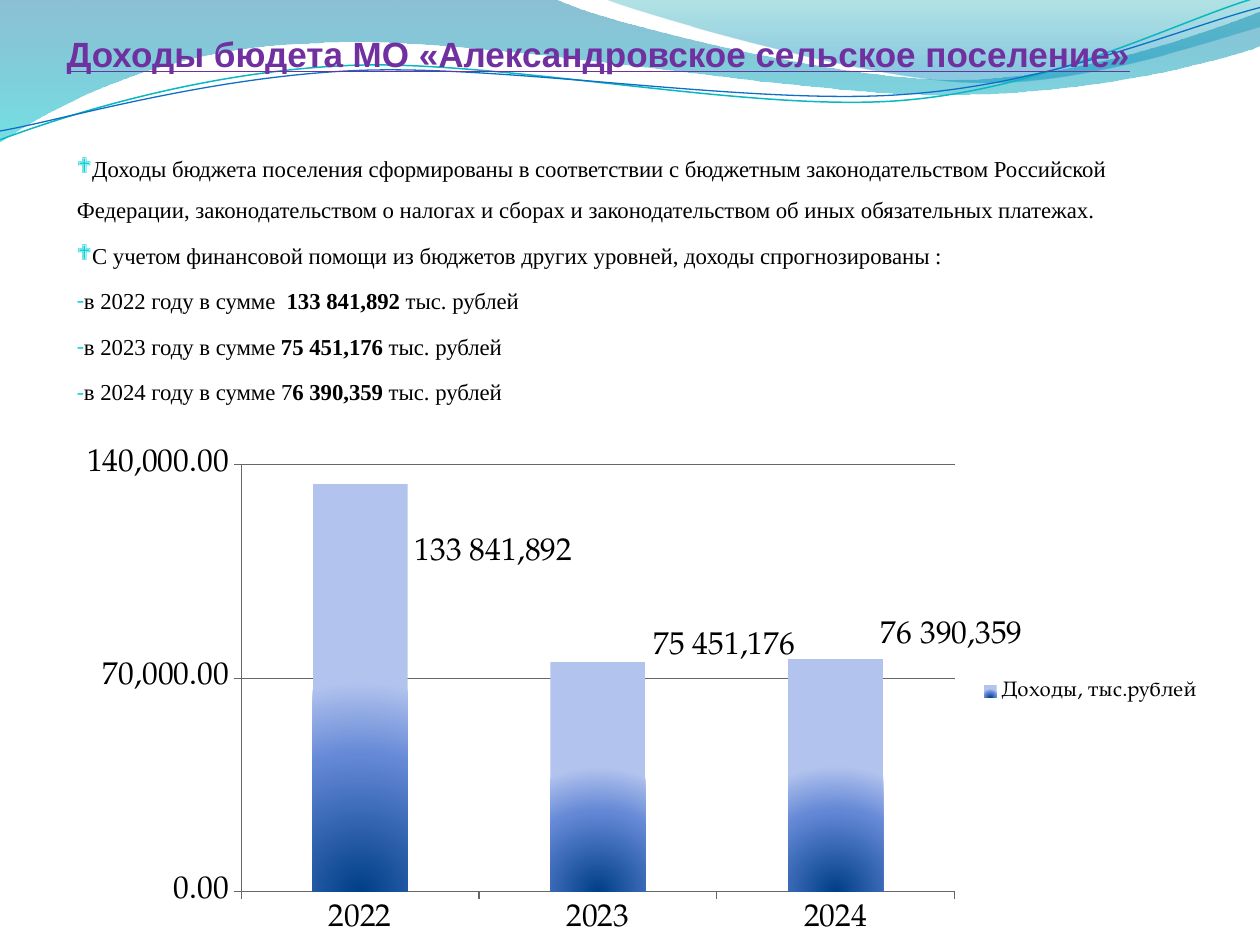
import pptx
import pptx.chart.data
import pptx.dml.color
import pptx.enum.chart
import pptx.enum.text
import pptx.oxml
import pptx.oxml.ns
import pptx.util

COLORS = {
    "title": "7030A0", "text": "000000", "bullet": "0BD0D9", "axis": "666666",
    "teal_line": "0AB8BF", "blue_line": "0F6FC6",
    "wave_top": "0074A1", "wave_bottom": "00C6CF",
    "crest_top": "00A1A9", "crest_bottom": "008BBF",
    "bar_core": "003F88", "bar_middle": "6488D6", "bar_edge": "B2C3EE",
}
A_NS = 'xmlns:a="http://schemas.openxmlformats.org/drawingml/2006/main"'
C_NS = 'xmlns:c="http://schemas.openxmlformats.org/drawingml/2006/chart"'
C15_NS = 'xmlns:c15="http://schemas.microsoft.com/office/drawing/2012/chart"'
GRID = 1000  # wave coordinates: a thousand units across the slide

# Each outline is a start point and segments: two numbers a line, six a curve.
WAVE = [(0, 0), (440, -1), (476, 17, 664, 63, 758, 63),
        (853, 63, 958, 26, 1000, 9), (1001, 36),
        (983, 44, 870, 76, 746, 75), (622, 75, 382, 28, 257, 34),
        (129, 36, 46, 83, -1, 113)]
CREST = [(479, -1), (509, 11, 682, 62, 769, 65),
         (856, 69, 961, 32, 1000, 21), (1000, 0)]
TEAL_CURVE = [(0, 111), (48, 93, 158, 57, 277, 52),
              (395, 47, 593, 89, 713, 80), (833, 71, 938, 15, 998, -2)]
BLUE_CURVE = [(0, 104), (47, 96, 164, 61, 283, 56),
              (403, 51, 597, 84, 717, 75), (836, 67, 941, 21, 1000, 6)]

TITLE = "Доходы бюдета МО «Александровское сельское поселение»"
BODY = [
    ("❖", ["Доходы бюджета поселения сформированы в соответствии с бюджетным "
           "законодательством Российской Федерации, законодательством о налогах и "
           "сборах и законодательством об иных обязательных платежах."]),
    ("❖", ["С учетом финансовой помощи из бюджетов других уровней, "
           "доходы спрогнозированы :"]),
    ("-", ["в 2022 году в сумме  ", "133 841,892 ", "тыс. рублей"]),
    ("-", ["в 2023 году в сумме ", "75 451,176 ", "тыс. рублей"]),
    ("-", ["в 2024 году в сумме 7", "6 390,359 ", "тыс. рублей"]),
]
BULLET_FONTS = {"❖": "Wingdings", "-": "Times New Roman"}
# year, income, label, label offset as shares of the chart
INCOME = [("2022", 133841.89, "133 841,892", (.116, -.265)),
          ("2023", 75451.18, "75 451,176", (.11, -.255)),
          ("2024", 76390.36, "76 390,359", (.101, -.273))]


def rgb(name):
    return pptx.dml.color.RGBColor.from_string(COLORS[name])


def apply(target, **values):
    for name, value in values.items():
        setattr(target, name, value)


def style_font(font, color, size, **values):
    font.color.rgb = rgb(color)
    apply(font, size=pptx.util.Pt(size), **values)


def draw_outline(slide, box, outline, closed):
    """Freeform through the segment ends, with its curves bent afterwards."""
    left, top, width, _ = box
    ends = [segment[-2:] for segment in outline]
    builder = slide.shapes.build_freeform(*ends[0], scale=width / GRID)
    builder.add_line_segments(ends[1:], close=closed)
    shape = builder.convert_to_shape(left, top)
    shape.shadow.inherit = False
    min_x, min_y = (min(axis) for axis in zip(*ends))
    lines = list(shape._element.iter(pptx.oxml.ns.qn("a:lnTo")))
    for line, segment in zip(lines, outline[1:]):
        if len(segment) == 6:
            points = "".join(f'<a:pt x="{x - min_x}" y="{y - min_y}"/>'
                             for x, y in zip(segment[::2], segment[1::2]))
            line.getparent().replace(line, pptx.oxml.parse_xml(
                f"<a:cubicBezTo {A_NS}>{points}</a:cubicBezTo>"))
    return shape


def add_waves(slide, box):
    bands = [(WAVE, [(0, "wave_top", 45), (1, "wave_bottom", 55)]),
             (CREST, [(0, "crest_top", 30), (.8, "crest_bottom", 45)])]
    for outline, stops in bands:
        band = draw_outline(slide, box, outline, True)
        band.line.fill.background()
        band.fill.gradient()
        band.fill.gradient_angle = 270
        for stop, (position, color, opacity) in zip(band.fill.gradient_stops, stops):
            stop.color.rgb = rgb(color)
            stop.position = position
            color_xml = stop._gs.find(pptx.oxml.ns.qn("a:srgbClr"))
            color_xml.append(pptx.oxml.parse_xml(
                f'<a:alpha {A_NS} val="{opacity * 1000}"/>'))
    for outline, color, weight in [(TEAL_CURVE, "teal_line", .85),
                                   (BLUE_CURVE, "blue_line", .75)]:
        curve = draw_outline(slide, box, outline, False)
        curve.fill.background()
        curve.line.color.rgb = rgb(color)
        curve.line.width = pptx.util.Pt(weight)


def add_title(slide, box):
    frame = slide.shapes.add_textbox(*box).text_frame
    frame.word_wrap = True
    run = frame.paragraphs[0].add_run()
    run.text = TITLE
    style_font(run.font, "title", 20, name="Arial", bold=True, underline=True)
    fill = run.font._element.find(pptx.oxml.ns.qn("a:solidFill"))
    fill.addnext(pptx.oxml.parse_xml(
        f'<a:uFill {A_NS}><a:solidFill><a:srgbClr val="{COLORS["title"]}"/>'
        "</a:solidFill></a:uFill>"))


def add_bullet(paragraph, mark):
    properties = paragraph._p.get_or_add_pPr()
    for xml in (f'<a:buClr {A_NS}><a:srgbClr val="{COLORS["bullet"]}"/></a:buClr>',
                f'<a:buSzPct {A_NS} val="95000"/>',
                f'<a:buFont {A_NS} typeface="{BULLET_FONTS[mark]}"/>',
                f'<a:buChar {A_NS} char="{mark}"/>'):
        properties.append(pptx.oxml.parse_xml(xml))


def add_body(slide, box):
    frame = slide.shapes.add_textbox(*box).text_frame
    apply(frame, word_wrap=True, margin_left=pptx.util.Inches(.02),
          margin_right=pptx.util.Inches(.02),
          vertical_anchor=pptx.enum.text.MSO_ANCHOR.TOP)
    for index, (mark, pieces) in enumerate(BODY):
        paragraph = frame.add_paragraph() if index else frame.paragraphs[0]
        apply(paragraph, line_spacing=1.5, space_before=pptx.util.Pt(2.6))
        add_bullet(paragraph, mark)
        for position, piece in enumerate(pieces):
            run = paragraph.add_run()
            run.text = piece
            style_font(run.font, "text", 13, name="Times New Roman",
                       bold=position == 1)


def layout_xml(target="", **shares):
    values = "".join(f'<c:{key} val="{value}"/>' for key, value in shares.items())
    return pptx.oxml.parse_xml(
        f"<c:layout {C_NS}><c:manualLayout>{target}{values}</c:manualLayout></c:layout>")


def fill_bars(series):
    """Radial gradient centred on the foot of each bar."""
    stops = "".join(
        f'<a:gs pos="{share * 1000}"><a:srgbClr val="{COLORS[color]}"/></a:gs>'
        for share, color in [(0, "bar_core"), (65, "bar_middle"), (100, "bar_edge")])
    series.format.line.fill.background()
    series._element.get_or_add_spPr().insert(0, pptx.oxml.parse_xml(
        f'<a:gradFill {A_NS}><a:gsLst>{stops}</a:gsLst><a:path path="circle">'
        '<a:fillToRect l="50000" t="100000" r="50000" b="0"/></a:path></a:gradFill>'))


def label_bars(series):
    for index, (_, _, text, (dx, dy)) in enumerate(INCOME):
        label = series.points[index].data_label
        label.text_frame.text = text
        style_font(label.text_frame.paragraphs[0].runs[0].font, "text", 18,
                   name="TeX Gyre Pagella")
        label._get_or_add_dLbl().insert(1, layout_xml(x=dx, y=dy))
    labels = series.data_labels
    labels.show_value = True
    for leader in labels._element.findall(pptx.oxml.ns.qn("c:showLeaderLines")):
        leader.set("val", "0")
    labels._element.append(pptx.oxml.parse_xml(
        f'<c:extLst {C_NS}><c:ext uri="{{CE6537A1-D6FC-4f65-9D91-7224C49458BB}}" '
        f'{C15_NS}><c15:showLeaderLines val="0"/></c:ext></c:extLst>'))


def add_income_chart(slide, box):
    data = pptx.chart.data.CategoryChartData()
    data.categories = [year for year, *_ in INCOME]
    data.add_series("Доходы, тыс.рублей", [value for _, value, *_ in INCOME])
    chart = slide.shapes.add_chart(
        pptx.enum.chart.XL_CHART_TYPE.COLUMN_STACKED, *box, data).chart
    apply(chart, has_title=False, has_legend=True)
    style_font(chart.font, "text", 18, name="TeX Gyre Pagella")
    apply(chart.legend, include_in_layout=False,
          position=pptx.enum.chart.XL_LEGEND_POSITION.RIGHT)
    style_font(chart.legend.font, "text", 12, name="TeX Gyre Pagella")

    value_axis = chart.value_axis
    apply(value_axis, minimum_scale=0, maximum_scale=140000, major_unit=70000,
          has_major_gridlines=True)
    apply(value_axis.tick_labels, number_format="#,##0.00", number_format_is_linked=False)
    for axis in (value_axis, chart.category_axis):
        axis.major_tick_mark = pptx.enum.chart.XL_TICK_MARK.OUTSIDE
        axis.format.line.color.rgb = rgb("axis")
    value_axis.major_gridlines.format.line.color.rgb = rgb("axis")

    plot = chart.plots[0]
    apply(plot, gap_width=150, overlap=100, vary_by_categories=False)
    fill_bars(plot.series[0])
    label_bars(plot.series[0])

    plot_area = chart._chartSpace.chart.plotArea
    for old_layout in plot_area.findall(pptx.oxml.ns.qn("c:layout")):
        plot_area.remove(old_layout)
    plot_area.insert(0, layout_xml(
        '<c:layoutTarget val="inner"/><c:xMode val="edge"/><c:yMode val="edge"/>',
        x=.154, y=.052, w=.62, h=.843))


def main():
    deck = pptx.Presentation()
    apply(deck, slide_width=pptx.util.Inches(10), slide_height=pptx.util.Inches(7.5))
    slide = deck.slides.add_slide(deck.slide_layouts[6])
    regions = [(add_waves, (0, 0, 1, 1)), (add_body, (.059, .143, .866, .304)),
               (add_income_chart, (.051, .464, .913, .536)),
               (add_title, (.043, .028, .906, .059))]
    sides = (deck.slide_width, deck.slide_height) * 2
    for add_region, shares in regions:
        add_region(slide, [round(share * side) for share, side in zip(shares, sides)])
    deck.save("out.pptx")


if __name__ == "__main__":
    main()
